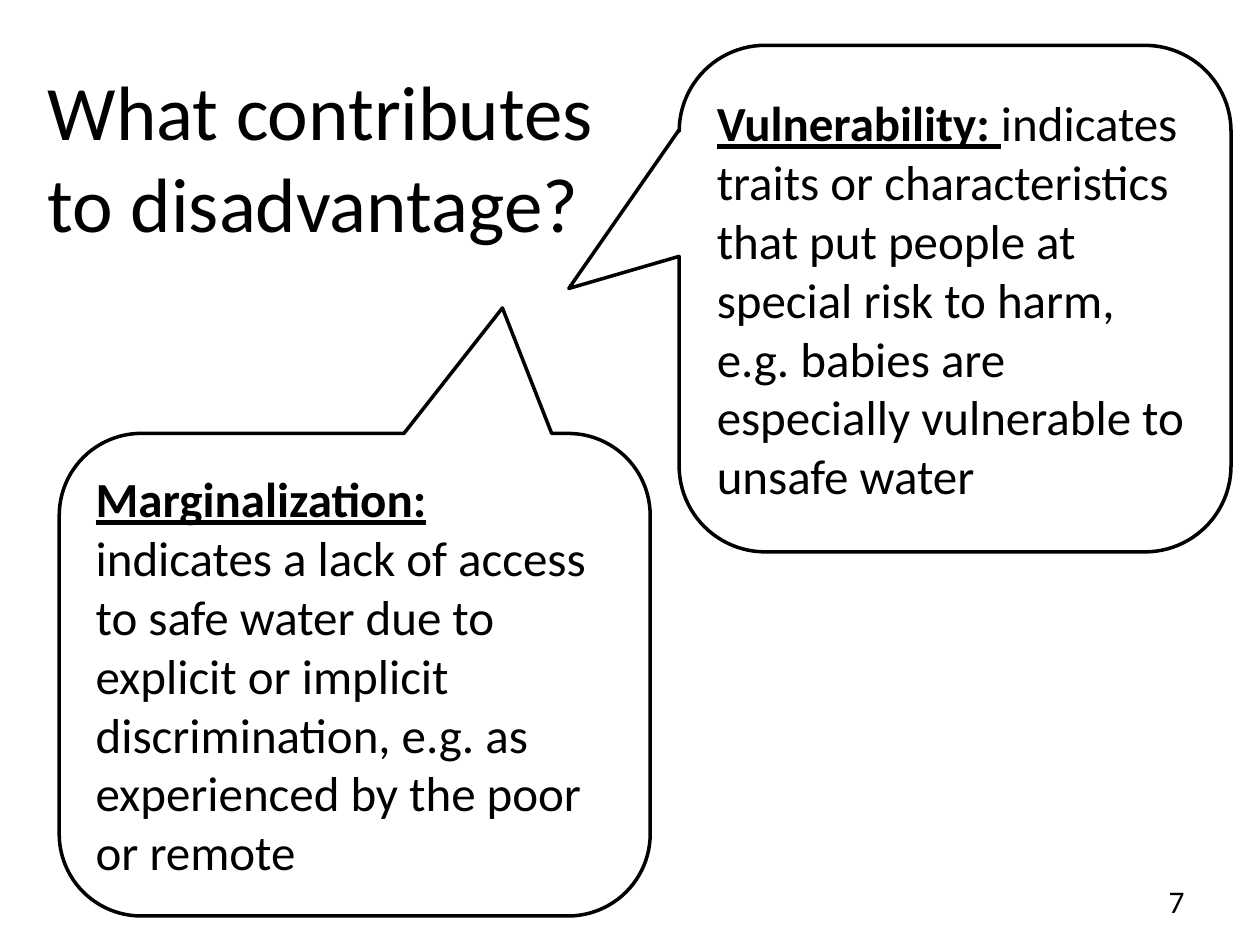
from pptx import Presentation
from pptx.dml.color import RGBColor
from pptx.enum.shapes import MSO_SHAPE
from pptx.enum.text import MSO_ANCHOR, MSO_AUTO_SIZE, PP_ALIGN
from pptx.util import Inches, Pt

CALLOUT = MSO_SHAPE.ROUNDED_RECTANGULAR_CALLOUT
MIDDLE = MSO_ANCHOR.MIDDLE
NO_AUTOFIT = MSO_AUTO_SIZE.NONE
LEFT, RIGHT = PP_ALIGN.LEFT, PP_ALIGN.RIGHT

THEME = {
    "font": "Calibri",
    "ink": RGBColor(0x00, 0x00, 0x00),
    "paper": RGBColor(0xFF, 0xFF, 0xFF),
    "title": Pt(44),
    "body": Pt(28),
    "number": Pt(18),
    "outline": Pt(2),
}

TITLE = "What contributes to disadvantage?"
TITLE_BOX = (0.28, 0.61, 4.65, 1.25)
PAGE_NUMBER = "7"
NUMBER_BOX = (7.17, 6.95, 2.33, 0.4)

# The pointer is the tip's offset from the centre, as a share of width and height.
CALLOUTS = [
    {
        "term": "Vulnerability: ",
        "meaning": "indicates traits or characteristics that put people at special "
                   "risk to harm, e.g. babies are especially vulnerable to unsafe water",
        "box": (5.39, 0.36, 4.38, 4.02),
        "pointer": (-0.7, -0.02),
        "right_inset": 0.1,
    },
    {
        "term": "Marginalization: ",
        "meaning": "indicates a lack of access to safe water due to explicit or implicit "
                   "discrimination, e.g. as experienced by the poor or remote",
        "box": (0.47, 3.44, 4.69, 3.83),
        "pointer": (0.25, -0.76),
        "right_inset": 0.2,
    },
]
CORNER = 0.17


def inches(box):
    return [Inches(length) for length in box]


def set_text(shape, parts, size, align=LEFT):
    """Fill a shape with one paragraph of (text, is_term) parts."""
    frame = shape.text_frame
    frame.word_wrap = True
    frame.auto_size = NO_AUTOFIT
    frame.vertical_anchor = MIDDLE
    paragraph = frame.paragraphs[0]
    paragraph.alignment = align
    for text, is_term in parts:
        run = paragraph.add_run()
        run.text = text
        font = run.font
        font.name = THEME["font"]
        font.size = size
        font.color.rgb = THEME["ink"]
        font.bold = font.underline = is_term


def add_callout(slide, callout):
    bubble = slide.shapes.add_shape(CALLOUT, *inches(callout["box"]))
    for index, value in enumerate((*callout["pointer"], CORNER)):
        bubble.adjustments[index] = value
    bubble.shadow.inherit = False
    bubble.fill.solid()
    bubble.fill.fore_color.rgb = THEME["paper"]
    bubble.line.color.rgb = THEME["ink"]
    bubble.line.width = THEME["outline"]
    bubble.text_frame.margin_right = Inches(callout["right_inset"])
    set_text(bubble, [(callout["term"], True), (callout["meaning"], False)], THEME["body"])


def main():
    deck = Presentation()
    deck.slide_width, deck.slide_height = Inches(10), Inches(7.5)
    slide = deck.slides.add_slide(deck.slide_layouts[5])

    title = slide.shapes.title
    title.left, title.top, title.width, title.height = inches(TITLE_BOX)
    set_text(title, [(TITLE, False)], THEME["title"])

    for callout in CALLOUTS:
        add_callout(slide, callout)

    number = slide.shapes.add_textbox(*inches(NUMBER_BOX))
    set_text(number, [(PAGE_NUMBER, False)], THEME["number"], RIGHT)

    deck.save("out.pptx")


if __name__ == "__main__":
    main()
